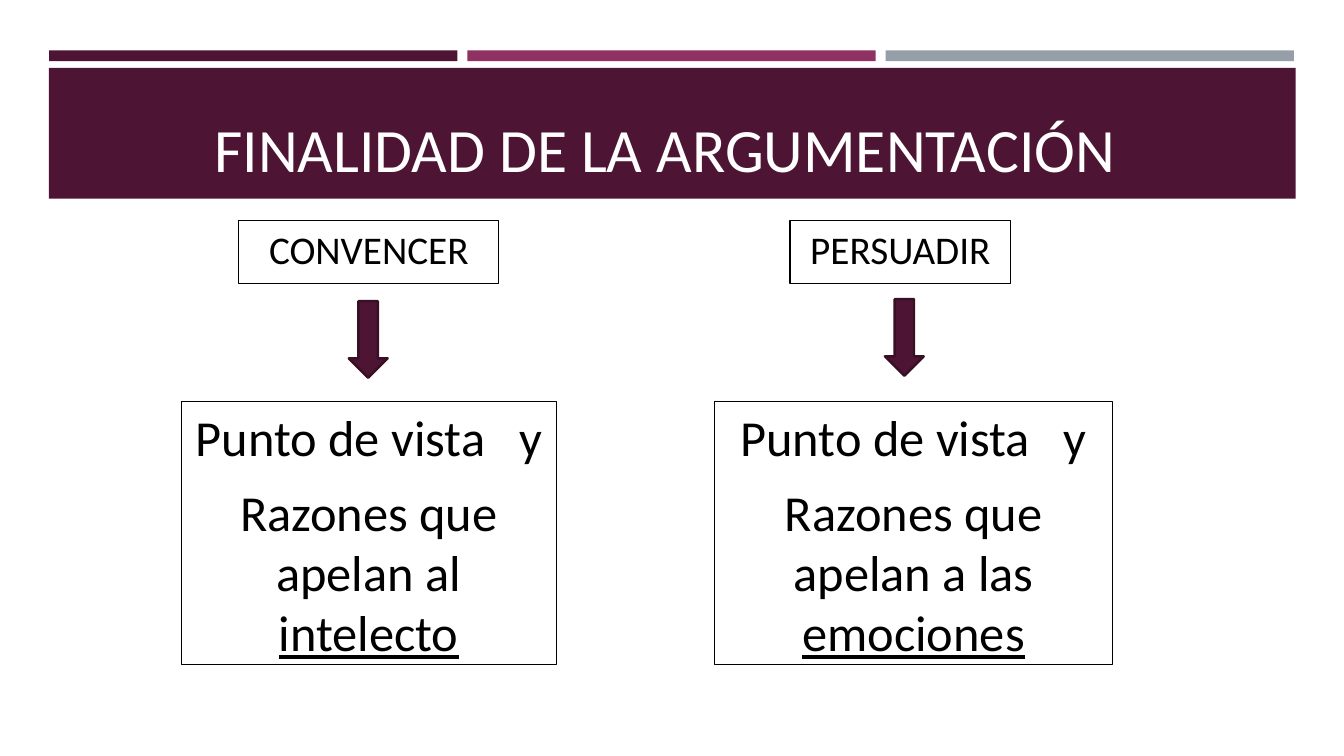
from pptx import Presentation
from pptx.dml.color import RGBColor
from pptx.enum.shapes import MSO_SHAPE
from pptx.enum.text import MSO_ANCHOR, PP_ALIGN
from pptx.util import Cm, Pt

RECT = MSO_SHAPE.RECTANGLE
ARROW = MSO_SHAPE.DOWN_ARROW
CENTER = PP_ALIGN.CENTER
TOP = MSO_ANCHOR.TOP
BOTTOM = MSO_ANCHOR.BOTTOM

PLUM = RGBColor(0x4D, 0x14, 0x34)
DARK = RGBColor(0x39, 0x0F, 0x26)
PINK = RGBColor(0x90, 0x31, 0x63)
GRAY = RGBColor(0x96, 0x9F, 0xA7)
WHITE = RGBColor(0xFF, 0xFF, 0xFF)
BLACK = RGBColor(0, 0, 0)

FONT = "Calibri"
GOALS = [
    ("CONVENCER", (6.02, 6.55), (8.79, 7.59), (4.57, 9.45),
     "Razones que apelan al ", "intelecto"),
    ("PERSUADIR", (19.91, 5.56), (22.3, 7.54), (18.01, 10.03),
     "Razones que apelan a las ", "emociones"),
]


def add_form(slide, kind, box, fill, line=None, width=0.75):
    """Add a filled shape, with an outline if a line colour is given."""
    form = slide.shapes.add_shape(kind, *[Cm(size) for size in box])
    form.shadow.inherit = False
    form.fill.solid()
    form.fill.fore_color.rgb = fill
    if line is None:
        form.line.fill.background()
    else:
        form.line.color.rgb = line
        form.line.width = Pt(width)
    return form


def add_run(para, text, size, color=BLACK, under=None, space=None):
    """Add one run, with optional underline and letter spacing in points."""
    run = para.add_run()
    run.text = text
    run.font.name = FONT
    run.font.size = Pt(size)
    run.font.color.rgb = color
    run.font.underline = under
    if space:
        run.font._element.set("spc", str(space * 100))


def add_box(slide, box, size, paras):
    """Add a bordered box with centred paragraphs of (text, options) runs."""
    frame = add_form(slide, RECT, box, WHITE, BLACK).text_frame
    frame.word_wrap = True
    frame.vertical_anchor = TOP
    for i, runs in enumerate(paras):
        para = frame.add_paragraph() if i else frame.paragraphs[0]
        para.alignment = CENTER
        para.space_after = Pt(10)
        for text, style in runs:
            add_run(para, text, size, **style)


def add_title(slide, text):
    """Place the title over the banner and format it."""
    title = slide.shapes.title
    slide.shapes._spTree.append(title._element)
    title.left, title.top = Cm(1.63), Cm(1.96)
    title.width, title.height = Cm(30.63), Cm(2.82)
    frame = title.text_frame
    frame.word_wrap = True
    frame.vertical_anchor = BOTTOM
    para = frame.paragraphs[0]
    para.alignment = CENTER
    add_run(para, text, 44, WHITE)


def add_goal(slide, name, head, arrow, body, reason, key):
    """Add one column: heading, arrow and explanation."""
    add_box(slide, (head[0], 5.56, head[1], 1.58), 28, [[(name, {})]])
    add_form(slide, ARROW, (*arrow, 0.98, 1.93), PLUM, DARK, 1.75)
    add_box(slide, (body[0], 10.11, body[1], 6.63), 36, [
        [("Punto de vista", {}), (" ", {"space": 16}), ("y", {})],
        [(reason, {}), (key, {"under": True})],
    ])


def main():
    """Build the slide and save it."""
    deck = Presentation()
    deck.slide_width, deck.slide_height = Cm(33.87), Cm(19.05)
    slide = deck.slides.add_slide(deck.slide_layouts[5])
    for i, color in enumerate((PLUM, PINK, GRAY)):
        add_form(slide, RECT, (1.24 + i * 10.54, 1.27, 10.29, 0.27), color)
    add_form(slide, RECT, (1.23, 1.71, 31.42, 3.3), PLUM)
    add_title(slide, "FINALIDAD DE LA ARGUMENTACIÓN ")
    for goal in GOALS:
        add_goal(slide, *goal)
    deck.save("out.pptx")


if __name__ == "__main__":
    main()
